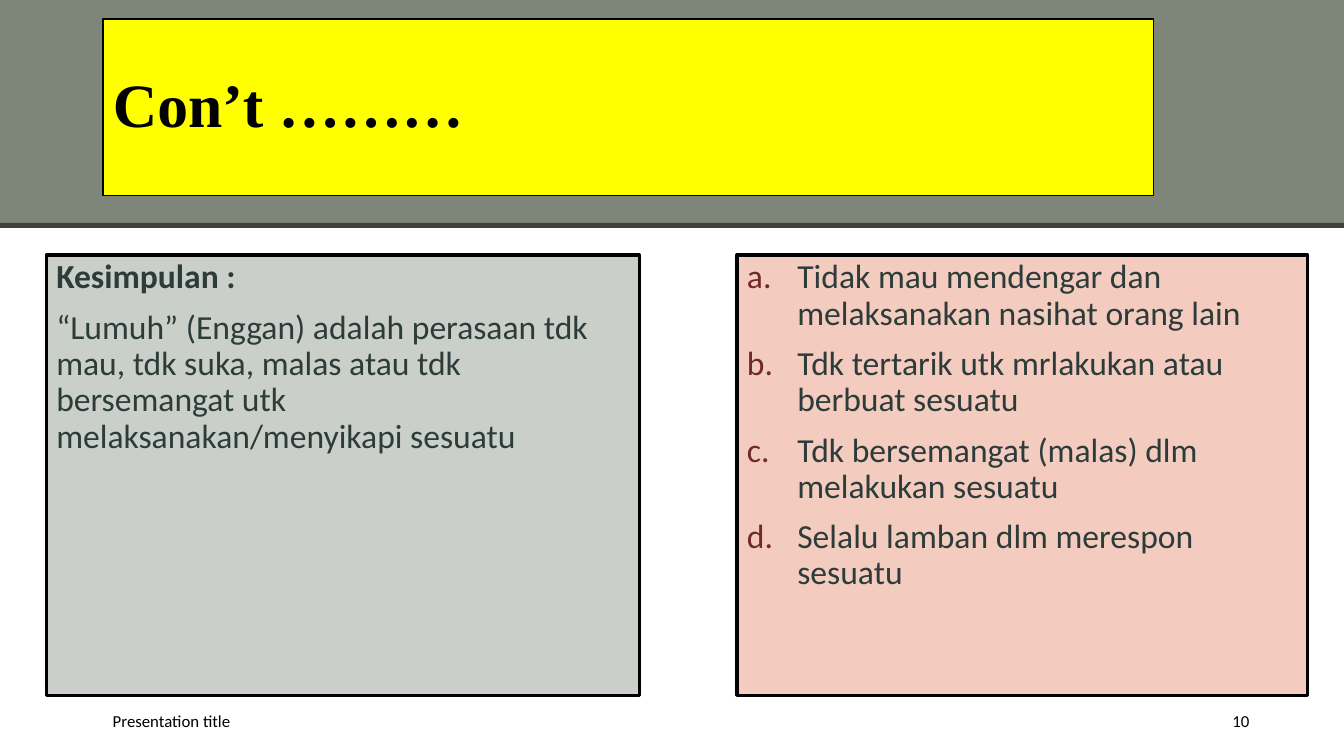
"""Build the concluding slide with a title band and two text panels."""
from dataclasses import dataclass

from lxml import etree
from pptx import Presentation
from pptx.dml.color import RGBColor
from pptx.enum.shapes import MSO_SHAPE
from pptx.enum.text import MSO_ANCHOR, PP_ALIGN
from pptx.oxml.ns import qn
from pptx.slide import Slide
from pptx.util import Inches, Pt

RECTANGLE = MSO_SHAPE.RECTANGLE
TOP, MIDDLE = MSO_ANCHOR.TOP, MSO_ANCHOR.MIDDLE
LEFT, RIGHT = PP_ALIGN.LEFT, PP_ALIGN.RIGHT


@dataclass(frozen=True)
class Theme:
    """Colours, fonts and type sizes of the slide."""

    band: str = "7E8679"
    rule: str = "3F433C"
    title_fill: str = "FFFF00"
    summary_fill: str = "CBCFC9"
    signs_fill: str = "F4CBBF"
    black: str = "000000"
    body: str = "2C3C3A"
    number: str = "72292A"
    title_font: str = "Times New Roman"
    body_font: str = "Calibri"
    title_size: int = 44
    body_size: int = 24
    footer_size: int = 12


THEME = Theme()


@dataclass(frozen=True)
class Panel:
    """A filled rectangle, outlined when its line width is above zero."""

    left: float
    top: float
    width: float
    height: float
    fill: str
    line: float = 0


@dataclass(frozen=True)
class Footer:
    """A small text at the foot of the slide."""

    text: str
    left: float
    width: float
    align: PP_ALIGN


BAND = Panel(0, 0, 13.33, 2.24, THEME.band)
RULE = Panel(0, 2.21, 13.33, 0.05, THEME.rule)
TITLE = Panel(1.02, 0.19, 10.42, 1.75, THEME.title_fill, 1)
SUMMARY = Panel(0.46, 2.53, 5.88, 4.37, THEME.summary_fill, 2.25)
SIGNS = Panel(7.31, 2.53, 5.66, 4.37, THEME.signs_fill, 2.25)

SUMMARY_TEXT = (
    "“Lumuh” (Enggan) adalah perasaan tdk mau, tdk suka, malas atau tdk "
    "bersemangat utk melaksanakan/menyikapi sesuatu"
)
SIGNS_TEXTS = (
    "Tidak mau mendengar dan melaksanakan nasihat orang lain",
    "Tdk tertarik utk mrlakukan atau berbuat sesuatu",
    "Tdk bersemangat (malas) dlm melakukan sesuatu",
    "Selalu lamban dlm merespon sesuatu",
)
FOOTERS = (
    Footer("Presentation title", 1.02, 4.5, LEFT),
    Footer("10", 11.63, 0.86, RIGHT),
)


def add_panel(page: Slide, panel: Panel):
    """Draw a panel and return its shape."""
    box = page.shapes.add_shape(
        RECTANGLE, Inches(panel.left), Inches(panel.top),
        Inches(panel.width), Inches(panel.height),
    )
    box.shadow.inherit = False
    box.fill.solid()
    box.fill.fore_color.rgb = RGBColor.from_string(panel.fill)
    if panel.line:
        box.line.color.rgb = RGBColor.from_string(THEME.black)
        box.line.width = Pt(panel.line)
    else:
        box.line.fill.background()
    return box


def number_paragraph(para) -> None:
    """Give a paragraph a hanging, coloured letter."""
    properties = para._p.get_or_add_pPr()
    properties.set("marL", str(Inches(0.5)))
    properties.set("indent", str(-Inches(0.5)))
    colour = etree.SubElement(properties, qn("a:buClr"))
    etree.SubElement(colour, qn("a:srgbClr"), val=THEME.number)
    etree.SubElement(properties, qn("a:buAutoNum"), type="alphaLcPeriod")


def write(box, text: str, *, size: int = THEME.body_size, font: str = THEME.body_font,
          colour: str = THEME.body, bold: bool = False, align: PP_ALIGN = LEFT,
          anchor: MSO_ANCHOR = TOP, spacing: float = 0.9, numbered: bool = False) -> None:
    """Append one formatted paragraph to a box."""
    frame = box.text_frame
    frame.word_wrap = True
    frame.vertical_anchor = anchor
    para = frame.paragraphs[0]
    if para.runs:
        para = frame.add_paragraph()
        para.space_before = Pt(10)
    if numbered:
        number_paragraph(para)
    para.alignment = align
    para.line_spacing = spacing
    span = para.add_run()
    span.text = text
    span.font.name = font
    span.font.size = Pt(size)
    span.font.bold = bold
    span.font.color.rgb = RGBColor.from_string(colour)


def add_footer(page: Slide, footer: Footer) -> None:
    """Write one footer text."""
    box = page.shapes.add_textbox(
        Inches(footer.left), Inches(6.95), Inches(footer.width), Inches(0.4)
    )
    write(box, footer.text, size=THEME.footer_size, colour=THEME.black,
          align=footer.align, anchor=MIDDLE, spacing=1.0)


def main() -> None:
    """Build and save the deck."""
    deck = Presentation()
    deck.slide_width, deck.slide_height = Inches(13.33), Inches(7.5)
    page = deck.slides.add_slide(deck.slide_layouts[6])

    add_panel(page, BAND)
    add_panel(page, RULE)
    write(add_panel(page, TITLE), "Con’t ………", size=THEME.title_size,
          font=THEME.title_font, colour=THEME.black, bold=True, anchor=MIDDLE)

    summary = add_panel(page, SUMMARY)
    write(summary, "Kesimpulan :", bold=True)
    write(summary, SUMMARY_TEXT)

    signs = add_panel(page, SIGNS)
    for text in SIGNS_TEXTS:
        write(signs, text, numbered=True)

    for footer in FOOTERS:
        add_footer(page, footer)
    deck.save("out.pptx")


if __name__ == "__main__":
    main()
